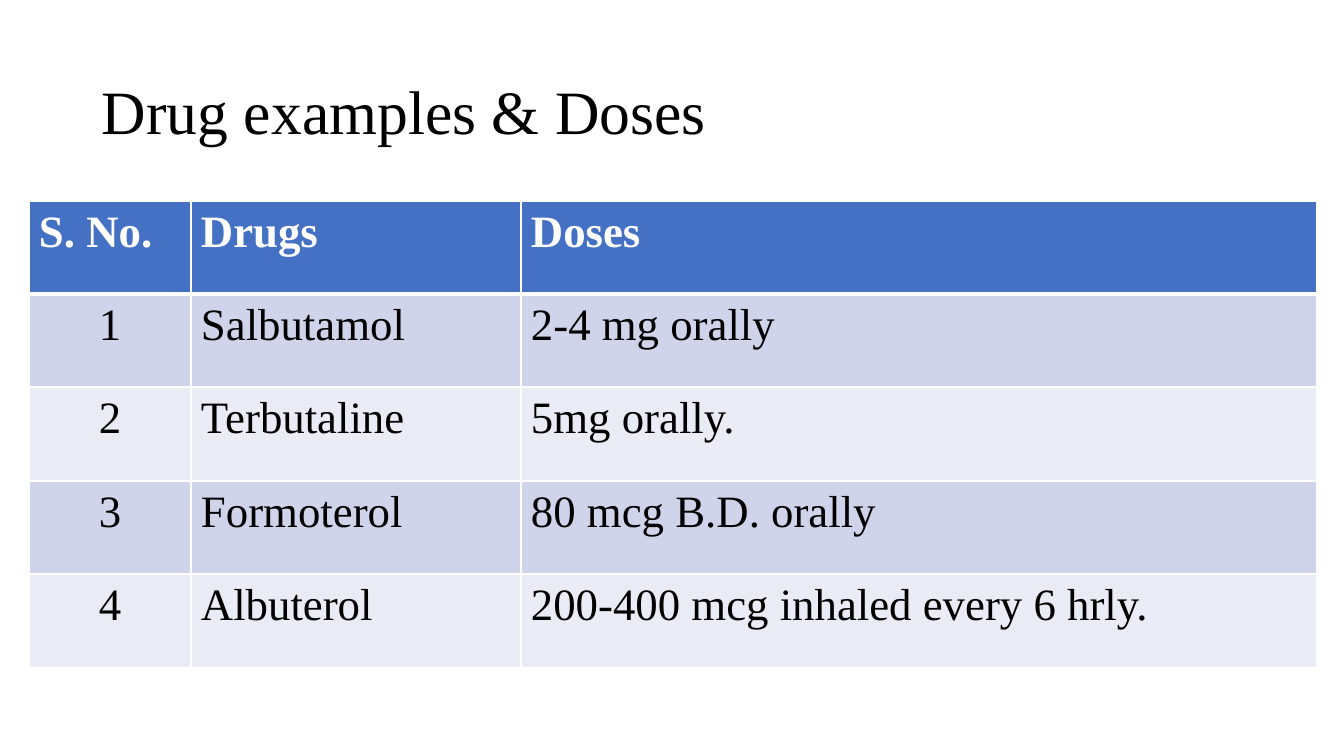
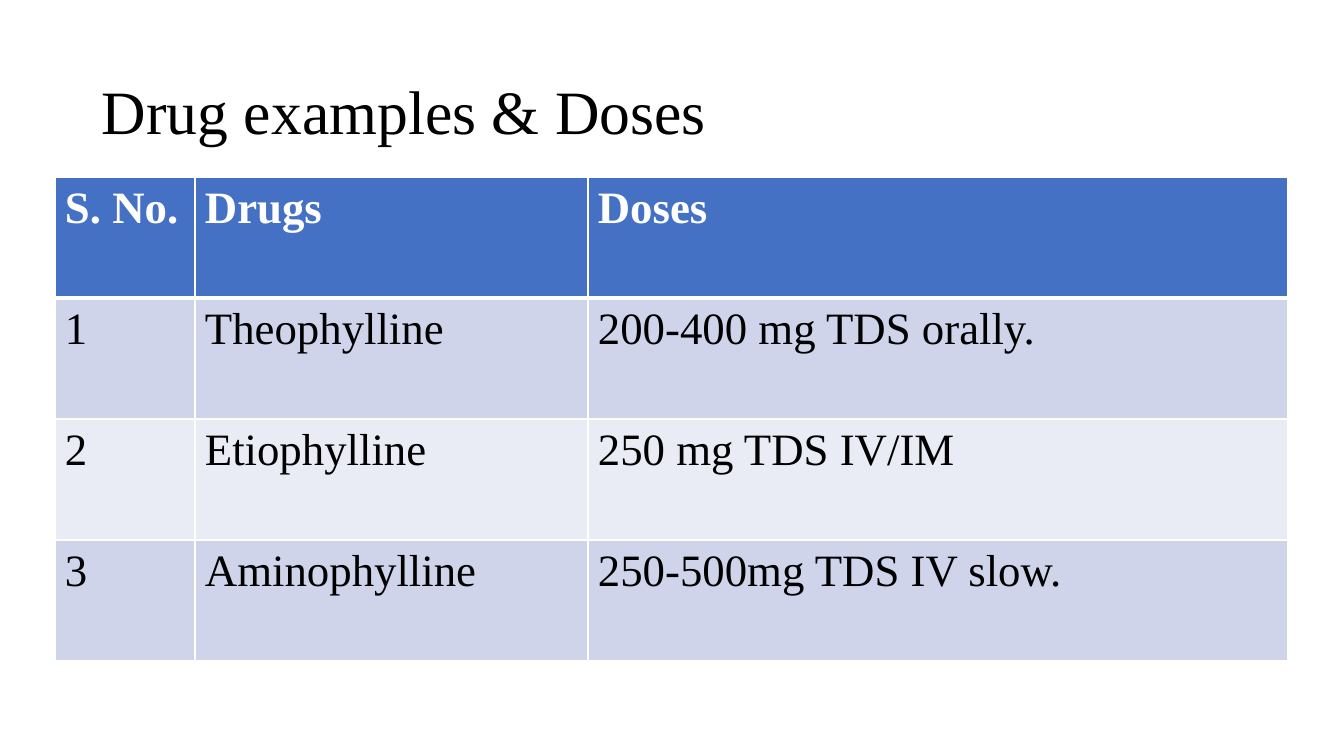
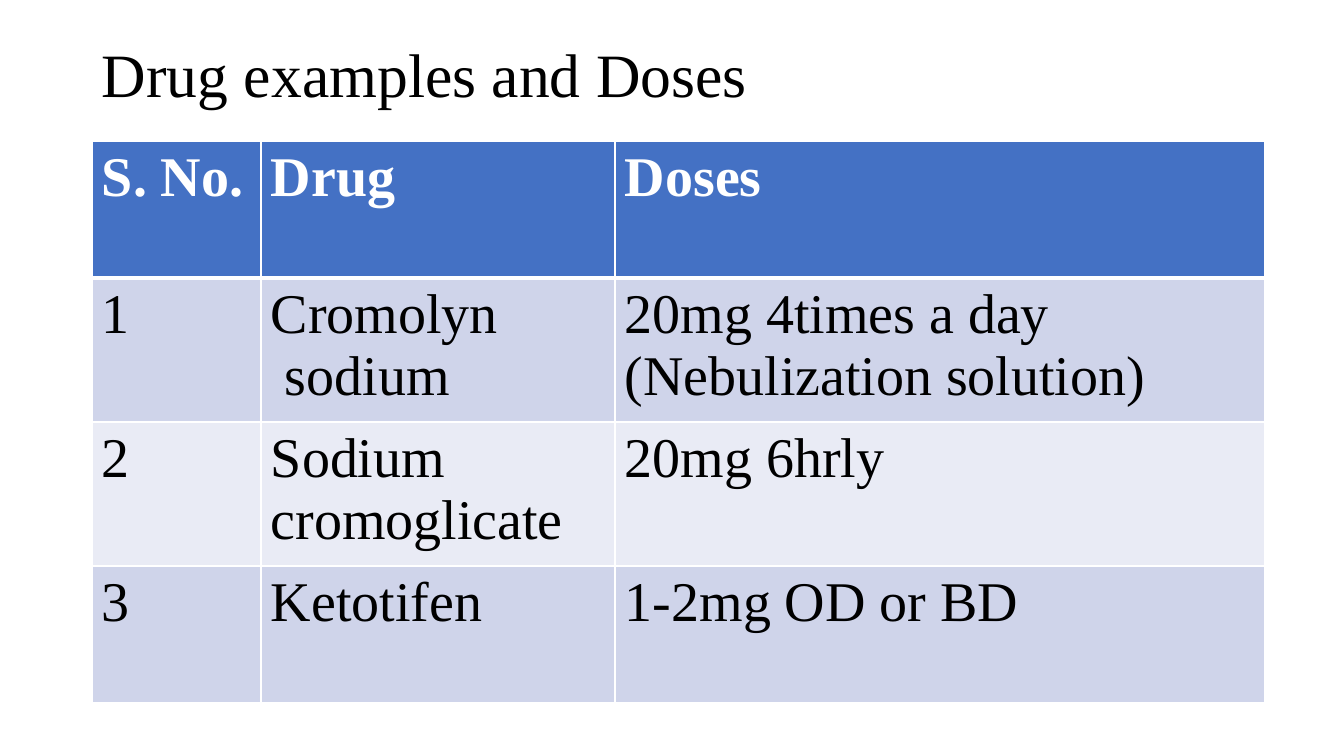
from lxml.etree import SubElement
from pptx import Presentation
from pptx.dml.color import RGBColor
from pptx.enum.text import MSO_ANCHOR, MSO_AUTO_SIZE, PP_ALIGN
from pptx.oxml.ns import qn
from pptx.util import Emu, Pt

PX_PER_INCH = 100.8
FONT = "Times New Roman"
BLACK = "000000"
WHITE = "FFFFFF"
HEADER_BLUE = "4471C4"
BANDS = ("E9EBF5", "CFD4EA")
TITLE_LEFT = 101
TITLE_HEIGHT = 77
CELL_PADDING = 10


def px(length):
    return Emu(round(length * 914400 / PX_PER_INCH))


def color(hex_text):
    return RGBColor.from_string(hex_text)


def format_text(para, size, hex_text, bold=False):
    for span in para.runs:
        span.font.name = FONT
        span.font.size = Pt(size)
        span.font.bold = bold
        span.font.color.rgb = color(hex_text)


def set_margins(target, left, top, right):
    target.margin_left = px(left)
    target.margin_top = px(top)
    target.margin_right = px(right)
    target.margin_bottom = 0


def add_title(page, text, top, width):
    box = page.shapes.title
    box.left, box.top = px(TITLE_LEFT), px(top)
    box.width, box.height = px(width), px(TITLE_HEIGHT)
    frame = box.text_frame
    frame.text = text
    frame.word_wrap = True
    frame.auto_size = MSO_AUTO_SIZE.SHAPE_TO_FIT_TEXT
    frame.vertical_anchor = MSO_ANCHOR.TOP
    set_margins(frame, 1, 3, 0)
    para = frame.paragraphs[0]
    para.alignment = PP_ALIGN.LEFT
    format_text(para, 44, BLACK)


def add_borders(cell, top, bottom):
    properties = cell._tc.get_or_add_tcPr()
    for side, weight in (("L", 1), ("R", 1), ("T", top), ("B", bottom)):
        line = SubElement(properties, qn(f"a:ln{side}"), w=str(Pt(weight)))
        fill = SubElement(line, qn("a:solidFill"))
        SubElement(fill, qn("a:srgbClr"), val=WHITE)


def fill_cell(cell, text, row, size, padding_top):
    is_header = row == 0
    add_borders(cell, 3 if row == 1 else 1, 3 if is_header else 1)
    cell.fill.solid()
    cell.fill.fore_color.rgb = color(HEADER_BLUE if is_header else BANDS[row % 2])
    cell.vertical_anchor = MSO_ANCHOR.TOP
    set_margins(cell, CELL_PADDING, padding_top, CELL_PADDING)
    cell.text_frame.text = text
    para = cell.text_frame.paragraphs[0]
    para.alignment = PP_ALIGN.LEFT
    format_text(para, size, WHITE if is_header else BLACK, is_header)
    return para


def add_dose_table(page, left, top, widths, heights, header, doses, size, padding_top):
    rows = [header] + [(str(number), *dose) for number, dose in enumerate(doses, 1)]
    frame = page.shapes.add_table(
        len(rows), len(header), px(left), px(top), px(sum(widths)), px(sum(heights))
    )
    table = frame.table
    table.horz_banding = False
    for column, width in zip(table.columns, widths):
        column.width = px(width)
    for row, height in zip(table.rows, heights):
        row.height = px(height)
    for row, texts in enumerate(rows):
        for column, text in enumerate(texts):
            fill_cell(table.cell(row, column), text, row, size, padding_top)
    return table


def center_numbers(table):
    for row in list(table.rows)[1:]:
        row.cells[0].text_frame.paragraphs[0].alignment = PP_ALIGN.CENTER


def hang_lines(cell, indent):
    properties = cell.text_frame.paragraphs[0]._p.get_or_add_pPr()
    properties.set("marL", str(px(indent)))
    properties.set("indent", str(-px(indent)))


def add_agonists(page):
    add_title(page, "Drug examples & Doses", 70, 607)
    doses = [
        ("Salbutamol", "2-4 mg orally"),
        ("Terbutaline", "5mg orally."),
        ("Formoterol", "80 mcg B.D. orally"),
        ("Albuterol", "200-400 mcg inhaled every 6 hrly."),
    ]
    table = add_dose_table(
        page, 29, 201, (162, 330, 796), (93, 93, 94, 93, 94),
        ("S. No.", "Drugs", "Doses"), doses, 32, 7,
    )
    center_numbers(table)


def add_xanthines(page):
    add_title(page, "Drug examples & Doses", 70, 607)
    doses = [
        ("Theophylline", "200-400 mg TDS orally."),
        ("Etiophylline", "250 mg TDS IV/IM"),
        ("Aminophylline", "250-500mg TDS IV slow."),
    ]
    add_dose_table(
        page, 55, 177, (140, 393, 700), (121,) * 4,
        ("S. No.", "Drugs", "Doses"), doses, 32, 7,
    )


def add_stabilizers(page):
    add_title(page, "Drug examples and Doses", 33, 648)
    doses = [
        ("Cromolyn sodium", "20mg 4times a day (Nebulization solution)"),
        ("Sodium cromoglicate", "20mg 6hrly"),
        ("Ketotifen", "1-2mg OD or BD"),
    ]
    table = add_dose_table(
        page, 92, 141, (169, 354, 650), (137, 144, 144, 137),
        ("S. No.", "Drug", "Doses"), doses, 40, 6,
    )
    hang_lines(table.cell(1, 1), 14)


def main():
    deck = Presentation()
    deck.slide_width, deck.slide_height = px(1344), px(756)
    for add_content in (add_agonists, add_xanthines, add_stabilizers):
        add_content(deck.slides.add_slide(deck.slide_layouts[5]))
    deck.save("out.pptx")


if __name__ == "__main__":
    main()
